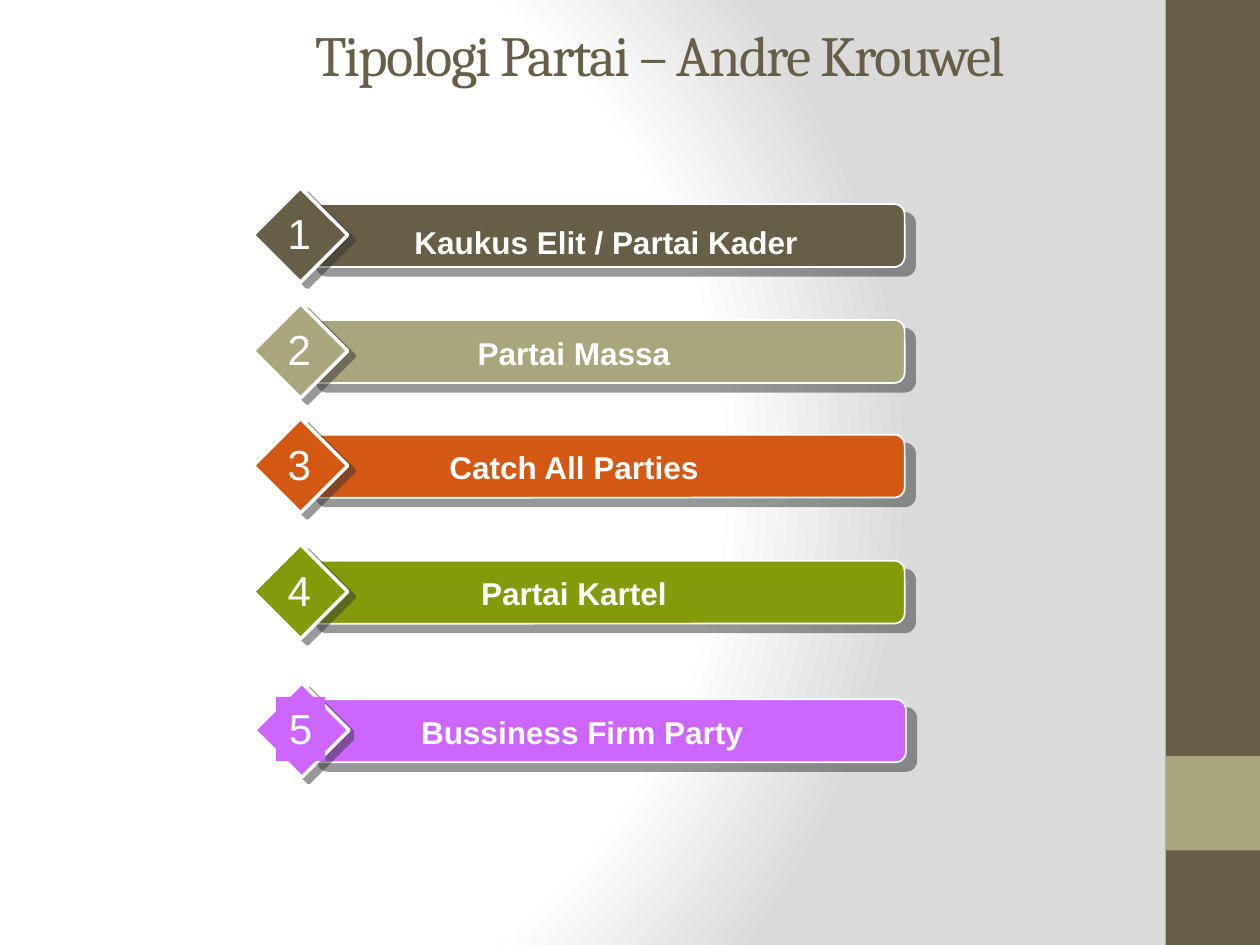
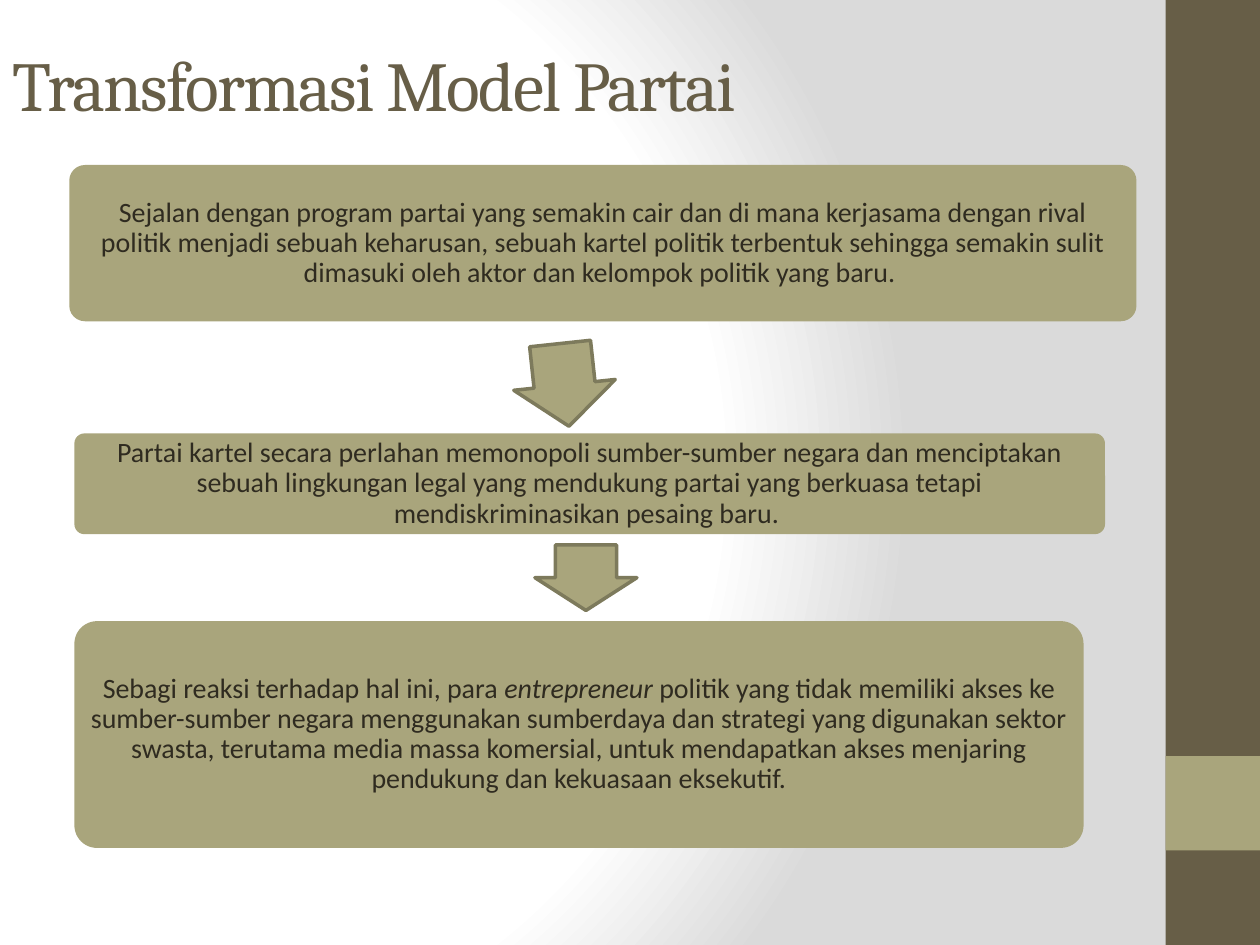
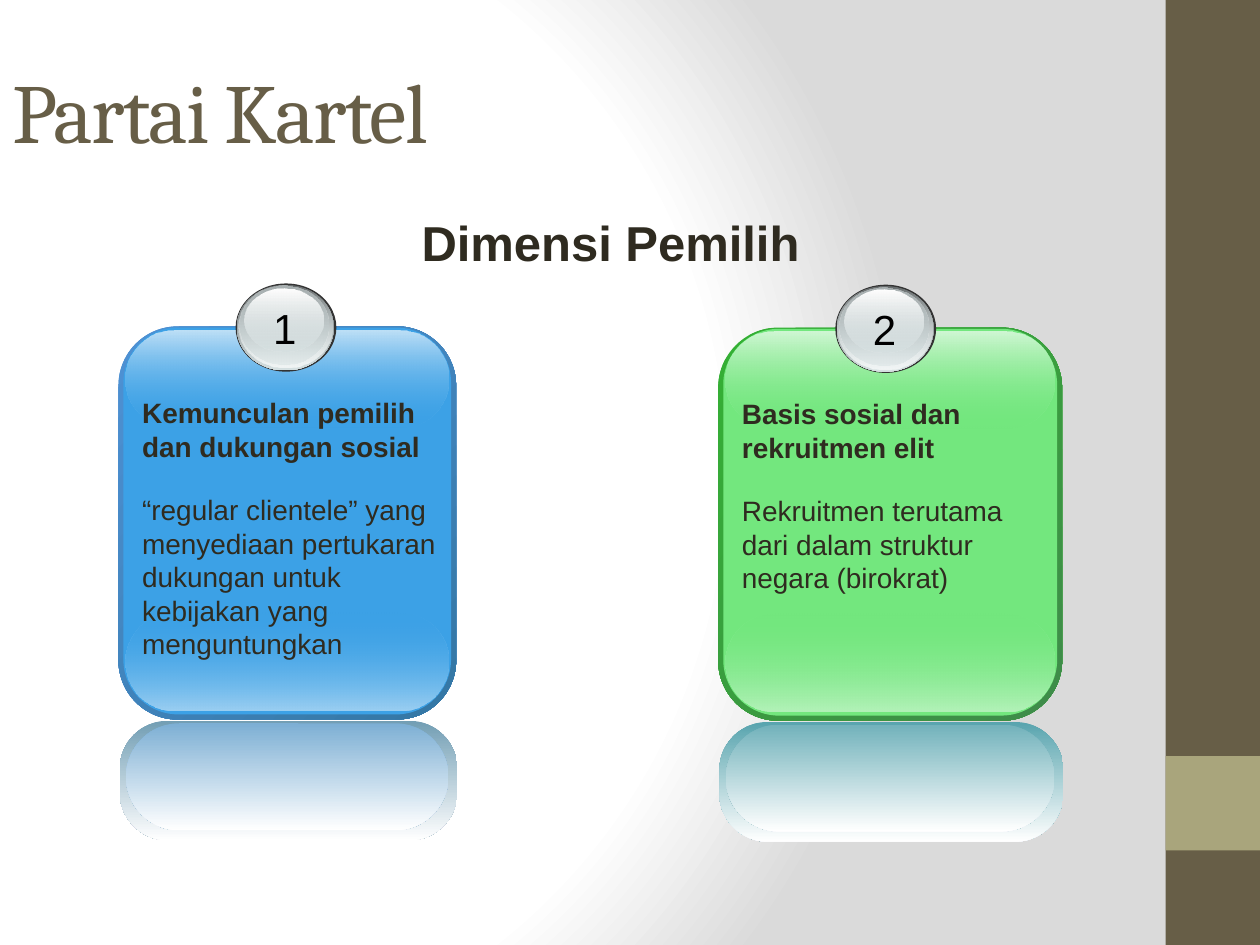
from lxml.etree import SubElement
from pptx import Presentation
from pptx.dml.color import RGBColor
from pptx.enum.shapes import MSO_SHAPE
from pptx.enum.text import MSO_ANCHOR, MSO_AUTO_SIZE, PP_ALIGN
from pptx.oxml.ns import qn
from pptx.util import Inches, Pt

# Colours
WHITE = RGBColor(0xFF, 0xFF, 0xFF)
BLACK = RGBColor(0x00, 0x00, 0x00)
INK = RGBColor(0x2F, 0x2B, 0x20)
BROWN = RGBColor(0x67, 0x5E, 0x47)
SAND = RGBColor(0xA9, 0xA5, 0x7C)
SAND_EDGE = RGBColor(0x7D, 0x7A, 0x5C)
ORANGE = RGBColor(0xD2, 0x58, 0x14)
GREEN = RGBColor(0x84, 0x9A, 0x0A)
PURPLE = RGBColor(0xCC, 0x66, 0xFF)
BACKDROP_GREY = RGBColor(0xDA, 0xDA, 0xDA)
SHADOW = RGBColor(0x33, 0x33, 0x33)
STEEL = RGBColor(0x63, 0x68, 0x69)
SILVER = RGBColor(0xAA, 0xB2, 0xB3)
MIST = RGBColor(0xD6, 0xE1, 0xE2)
PEARL = RGBColor(0xF1, 0xF5, 0xF5)

BLUE_CARD = {
    "rim": (RGBColor(0x4E, 0x91, 0xD4), RGBColor(0x34, 0x77, 0xA4)),
    "face": RGBColor(0x3C, 0xA1, 0xE6),
    "top": RGBColor(0xBE, 0xE0, 0xF7),
    "bottom": RGBColor(0x9B, 0xCF, 0xF2),
    "reflection": (RGBColor(0x72, 0x9E, 0xB4), RGBColor(0x7D, 0xAF, 0xD4)),
}
GREEN_CARD = {
    "rim": (RGBColor(0x34, 0xB0, 0x34), RGBColor(0x3F, 0x8B, 0x4A)),
    "face": RGBColor(0x73, 0xE7, 0x7E),
    "top": RGBColor(0xD0, 0xF7, 0xD4),
    "bottom": RGBColor(0xB3, 0xF2, 0xB9),
    "reflection": (RGBColor(0x58, 0xA4, 0xAE), RGBColor(0x72, 0xB2, 0xBB)),
}

# Badge layers: left and top offset, width reduction, height, fill
BADGE_LAYERS = [
    (0, 0, 0, 0.7, SHADOW),
    (0.01, 0.01, 0.03, 0.68, [(0, STEEL), (100, MIST)]),
    (0.02, 0.01, 0.05, 0.66, [(0, MIST, 0), (100, PEARL)]),
    (0.03, 0.02, 0.09, 0.62, [(0, SILVER), (100, MIST, 48)]),
    (0.07, 0.04, 0.17, 0.5, [(0, WHITE), (100, MIST, 38)]),
]


def add_colour(parent, colour, alpha=100):
    element = SubElement(parent, qn("a:srgbClr"), val=str(colour))
    if alpha < 100:
        SubElement(element, qn("a:alpha"), val=str(alpha * 1000))


def set_gradient(properties, stops, angle=None):
    """Replace the solid fill by a linear gradient, or a circular one without angle."""
    solid = properties.find(qn("a:solidFill"))
    gradient = SubElement(properties, qn("a:gradFill"), rotWithShape="1")
    properties.replace(solid, gradient)
    stop_list = SubElement(gradient, qn("a:gsLst"))
    for position, *colour in stops:
        stop = SubElement(stop_list, qn("a:gs"), pos=str(position * 1000))
        add_colour(stop, *colour)
    if angle is None:
        circle = SubElement(gradient, qn("a:path"), path="circle")
        SubElement(circle, qn("a:fillToRect"), l="20000", t="50000", r="100000", b="50000")
    else:
        SubElement(gradient, qn("a:lin"), ang=str(angle * 60000), scaled="0")


def add_shadow(shape, distance, angle):
    effects = shape.element.spPr.find(qn("a:effectLst"))
    shadow = SubElement(effects, qn("a:outerShdw"), blurRad="0", dist=str(Pt(distance)),
                        dir=str(angle * 60000), algn="ctr", rotWithShape="0")
    add_colour(shadow, SHADOW, 50)


class Deck:
    def __init__(self):
        self.presentation = Presentation()
        self.presentation.slide_width = Inches(10)
        self.presentation.slide_height = Inches(7.5)
        self.slide = None

    def style_master(self):
        """Put the backdrop and the side bands on the master."""
        master = self.presentation.slide_master
        master.background.fill.solid()
        master.background.fill.fore_color.rgb = WHITE
        set_gradient(master.element.find(".//" + qn("p:bgPr")),
                     [(0, WHITE), (75, WHITE), (100, BACKDROP_GREY)])
        bands = [self.shape(MSO_SHAPE.RECTANGLE, (9.25, 0, 0.75, 7.5), BROWN),
                 self.shape(MSO_SHAPE.RECTANGLE, (9.25, 6, 0.75, 0.75), SAND)]
        for index, band in enumerate(bands, start=2):
            master.element.cSld.spTree.insert(index, band.element)

    def new_slide(self, title, frame, size):
        layout = self.presentation.slide_layouts[5]
        self.slide = self.presentation.slides.add_slide(layout)
        shape = self.slide.shapes.title
        shape.left, shape.top, shape.width, shape.height = map(Inches, frame)
        shape.text_frame.text = title
        shape.text_frame.auto_size = MSO_AUTO_SIZE.NONE
        shape.text_frame.vertical_anchor = MSO_ANCHOR.MIDDLE
        paragraph = shape.text_frame.paragraphs[0]
        self.format(paragraph, size, BROWN, "Cambria", align=PP_ALIGN.LEFT)
        paragraph.runs[0].font._element.set("spc", "-100")

    def format(self, paragraph, size, colour, font="Arial", bold=False, align=PP_ALIGN.CENTER):
        paragraph.alignment = align
        for run in paragraph.runs:
            run.font.size = Pt(size)
            run.font.name = font
            run.font.bold = bold
            run.font.color.rgb = colour

    def shape(self, kind, frame, fill, adjustments=(), angle=90, line=None):
        shape = self.slide.shapes.add_shape(kind, *map(Inches, frame))
        shape.shadow.inherit = False
        for index, value in enumerate(adjustments):
            shape.adjustments[index] = value
        shape.fill.solid()
        if isinstance(fill, list):
            set_gradient(shape.element.spPr, fill, angle)
        else:
            shape.fill.fore_color.rgb = fill
        if line:
            shape.line.color.rgb, shape.line.width = line[0], Pt(line[1])
        else:
            shape.line.fill.background()
        return shape

    def rounded(self, frame, fill, corner, **options):
        return self.shape(MSO_SHAPE.ROUNDED_RECTANGLE, frame, fill, [corner], **options)

    def text(self, text, frame, size, colour, bold=False, wrap=True, fill=None):
        box = self.slide.shapes.add_textbox(*map(Inches, frame))
        box.text_frame.word_wrap = wrap
        box.text_frame.text = text
        self.format(box.text_frame.paragraphs[0], size, colour, bold=bold)
        if fill:
            box.fill.solid()
            box.fill.fore_color.rgb = fill
        return box

    def type_row(self, number, label, left, top, colour, label_frame, label_fill=None):
        bar = self.rounded((left, top, 4.75, 0.5), colour, 0.167, line=(WHITE, 1))
        add_shadow(bar, 7.8, 40)
        diamond = self.shape(MSO_SHAPE.DIAMOND, (left - 0.42, top - 0.13, 0.75, 0.75),
                             colour, line=(WHITE, 2))
        add_shadow(diamond, 5, 37)
        label_left, label_drop, label_width = label_frame
        self.text(label, (label_left, top + label_drop, label_width, 0.4), 18, WHITE,
                  bold=True, fill=label_fill)
        self.text(str(number), (left - 0.25, top - 0.02, 0.39, 0.51), 24, WHITE,
                  wrap=False, fill=label_fill)

    def step(self, frame, runs):
        """Rounded box whose text lies inside the corner curve."""
        left, top, width, height = frame
        self.rounded(frame, SAND, 0.1)
        inset = 0.03 * height
        box = self.slide.shapes.add_textbox(*map(Inches, (
            left + inset, top + inset, width - 2 * inset, height - 2 * inset)))
        text_frame = box.text_frame
        text_frame.word_wrap = True
        text_frame.vertical_anchor = MSO_ANCHOR.MIDDLE
        text_frame.margin_left = text_frame.margin_right = Inches(0.07)
        text_frame.margin_top = text_frame.margin_bottom = Inches(0.07)
        paragraph = text_frame.paragraphs[0]
        for index, words in enumerate(runs):
            run = paragraph.add_run()
            run.text = words
            run.font.italic = index % 2 == 1
        paragraph.line_spacing = 0.9
        self.format(paragraph, 16, INK, "Calibri")

    def arrow(self, frame, rotation):
        arrow = self.shape(MSO_SHAPE.RIGHT_ARROW, frame, SAND, [0.6, 0.5], line=(SAND_EDGE, 2))
        arrow.rotation = rotation

    def badge(self, number, left, top, width):
        for across, down, narrower, height, fill in BADGE_LAYERS:
            self.shape(MSO_SHAPE.OVAL, (left + across, top + down, width - narrower, height), fill)
        self.text(str(number), (left + 0.17, top + 0.1, 0.44, 0.5), 24, BLACK, wrap=False)

    def card(self, number, left, top, width, colours, heading, body):
        face = colours["face"]
        outer, inner = colours["reflection"]
        gloss_left, gloss_width = left + 0.06, width - 0.12
        # Glossy body
        self.rounded((left, top, width, 3.12), list(zip((0, 100), colours["rim"])),
                     0.175, angle=45)
        self.rounded((left + 0.04, top + 0.01, width - 0.08, 3.07), face, 0.167)
        self.rounded((gloss_left, top + 2.27, gloss_width, 0.78),
                     [(0, face, 0), (100, colours["bottom"])], 0.5)
        self.rounded((gloss_left, top + 0.03, gloss_width, 0.77),
                     [(0, colours["top"]), (100, face, 0)], 0.5)
        # Reflection below
        self.rounded((left + 0.01, top + 3.13, width, 0.95), [(0, outer), (100, WHITE)], 0.404)
        self.rounded((gloss_left, top + 3.15, gloss_width, 0.85), [(0, inner), (100, WHITE)], 0.5)
        # Number and text
        self.badge(number, left + 0.93, top - 0.34, 0.8)
        box = self.text(heading, (left + 0.09, top + 0.5, width - 0.13, 2.22), 16, INK)
        self.format(box.text_frame.paragraphs[0], 16, INK, bold=True, align=PP_ALIGN.LEFT)
        paragraph = box.text_frame.add_paragraph()
        paragraph.text = body
        paragraph.space_before = Pt(17)
        self.format(paragraph, 16, INK, align=PP_ALIGN.LEFT)


def main():
    deck = Deck()

    # Slide 1: the five party types
    deck.new_slide("Tipologi Partai – Andre Krouwel", (2.4, 0.12, 7.6, 0.62), 32.4)
    deck.style_master()
    label_frame = (2.68, 0.06, 3.75)
    party_types = [
        ("Kaukus Elit / Partai Kader ", 2.43, 1.62, BROWN, (2.97, 0.1, 3.75)),
        ("Partai Massa", 2.43, 2.54, SAND, label_frame),
        ("Catch All Parties", 2.43, 3.45, ORANGE, label_frame),
        ("Partai Kartel", 2.43, 4.45, GREEN, label_frame),
        ("Bussiness Firm Party", 2.44, 5.55, PURPLE, (2.81, 0.06, 3.62), PURPLE),
    ]
    for number, party_type in enumerate(party_types, start=1):
        deck.type_row(number, *party_type)

    # Slide 2: the three steps of the transformation
    deck.new_slide("Transformasi Model Partai", (0, 0.25, 9, 0.82), 40)
    deck.step((0.55, 1.31, 8.47, 1.24), [
        "Sejalan dengan program partai yang semakin cair dan di mana kerjasama dengan rival "
        "politik menjadi sebuah keharusan, sebuah kartel politik terbentuk sehingga semakin "
        "sulit dimasuki oleh aktor dan kelompok politik yang baru. "])
    deck.arrow((4.15, 2.65, 0.66, 0.81), 83.9)
    deck.step((0.59, 3.44, 8.18, 0.8), [
        "Partai kartel secara perlahan memonopoli sumber-sumber negara dan menciptakan sebuah "
        "lingkungan legal yang mendukung partai yang berkuasa tetapi mendiskriminasikan "
        "pesaing baru. "])
    deck.arrow((4.39, 4.18, 0.52, 0.81), 90)
    deck.step((0.59, 4.93, 8.01, 1.8), [
        "Sebagi reaksi terhadap hal ini, para ",
        "entrepreneur",
        " politik yang tidak memiliki akses ke sumber-sumber negara menggunakan sumberdaya dan "
        "strategi yang digunakan sektor swasta, terutama media massa komersial, untuk "
        "mendapatkan akses menjaring pendukung dan kekuasaan eksekutif."])

    # Slide 3: the voter dimension of the cartel party
    deck.new_slide("Partai Kartel", (0, 0.25, 9, 1.25), 48)
    deck.card(1, 0.94, 2.59, 2.68, BLUE_CARD, "Kemunculan pemilih dan dukungan sosial",
              "“regular clientele” yang menyediaan pertukaran dukungan untuk kebijakan yang "
              "menguntungkan")
    deck.card(2, 5.7, 2.6, 2.73, GREEN_CARD, "Basis sosial dan rekruitmen elit",
              "Rekruitmen terutama dari dalam struktur negara (birokrat)")
    deck.text("Dimensi Pemilih", (2.5, 1.64, 4.69, 0.57), 28, INK, bold=True)

    deck.presentation.save("out.pptx")


if __name__ == "__main__":
    main()
